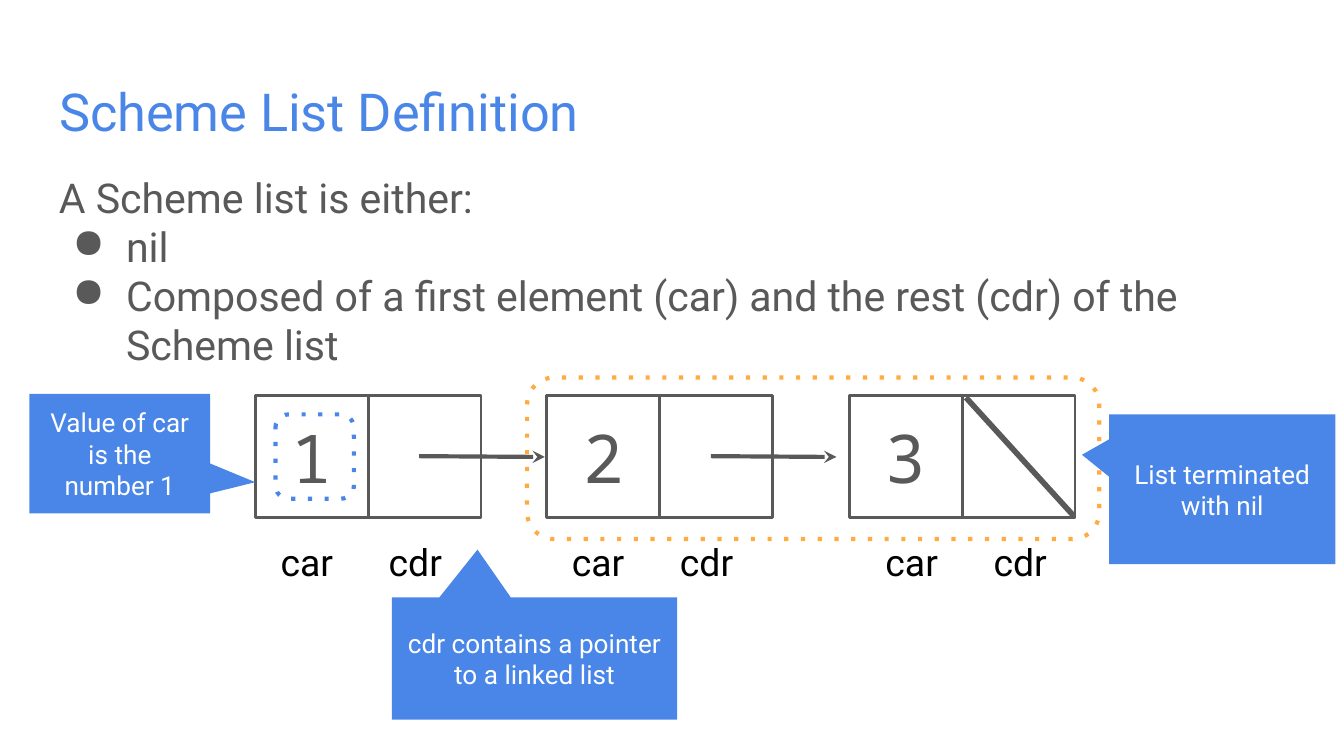
import dataclasses
import typing

import pptx
import pptx.dml.color
import pptx.enum.shapes
import pptx.enum.text
import pptx.oxml
import pptx.oxml.ns
import pptx.util

Pt = pptx.util.Pt
Shape = pptx.enum.shapes.MSO_SHAPE
Align = pptx.enum.text.PP_ALIGN
Anchor = pptx.enum.text.MSO_ANCHOR

BLUE, GRAY, ORANGE, WHITE, BLACK = "4A86E8", "595959", "FFAB40", "FFFFFF", "000000"
INSET = 7.2
CELL_TOP, CELL_WIDTH, CELL_HEIGHT = 211.7, 60.5, 65.5
LABEL_TOP, LABEL_WIDTH, LABEL_HEIGHT = 281.5, 58.1, 28.8
ARROW_OFFSET, ARROW_LENGTH, ARROW_TOP = 87.8, 67.3, 244.4


class Frame(typing.NamedTuple):
    left: float
    top: float
    width: float
    height: float

    def lengths(self) -> list:
        return [Pt(value) for value in self]


@dataclasses.dataclass
class Pair:
    value: str
    left: float
    label_left: float


@dataclasses.dataclass
class Callout:
    text: str
    frame: Frame
    tip: tuple[float, float]


PAIRS = [Pair("1", 136.8, 135.4), Pair("2", 293, 291.4), Pair("3", 455, 459.4)]
CALLOUTS = [
    Callout("Value of car is the number 1", Frame(15.8, 211, 96.8, 64), (0.75, 0.24)),
    Callout("cdr contains a pointer to a linked list", Frame(210, 320, 152.8, 65.5), (-0.2, -0.89)),
    Callout("List terminated with nil", Frame(594.2, 222, 121.2, 80.2), (-0.62, -0.23)),
]
HIGHLIGHTS = {
    BLUE: Frame(147.6, 222, 42, 45.2),
    ORANGE: Frame(282.4, 202.3, 306.5, 86.5),
}
BODY = [
    ("A Scheme list is either:", False),
    ("nil", True),
    ("Composed of a first element (car) and the rest (cdr) of the Scheme list", True),
]


def color(value: str) -> pptx.dml.color.RGBColor:
    return pptx.dml.color.RGBColor.from_string(value)


def append_xml(parent, tag: str, attributes: str = "") -> None:
    parent.append(pptx.oxml.parse_xml(
        f"<a:{tag} {pptx.oxml.ns.nsdecls('a')} {attributes}/>"))


def format_frame(box, anchor=Anchor.TOP):
    settings = {
        "word_wrap": True,
        "auto_size": pptx.enum.text.MSO_AUTO_SIZE.NONE,
        "vertical_anchor": anchor,
        "margin_left": Pt(INSET),
        "margin_right": Pt(INSET),
        "margin_top": Pt(INSET),
        "margin_bottom": Pt(INSET),
    }
    for name, value in settings.items():
        setattr(box.text_frame, name, value)
    return box.text_frame


def write(para, text: str, size: float, ink: str, align=Align.CENTER, font="Roboto") -> None:
    para.alignment = align
    span = para.add_run()
    span.text = text
    for name, value in {"size": Pt(size), "name": font}.items():
        setattr(span.font, name, value)
    span.font.color.rgb = color(ink)


def add_bullet(para) -> None:
    properties = para._p.get_or_add_pPr()
    properties.set("marL", str(Pt(36)))
    properties.set("indent", str(-Pt(28.8)))
    append_xml(properties, "buChar", 'char="●"')


def add_box(shapes, kind, frame: Frame, fill: str = "", line: str = "", width: float = 1.5):
    box = shapes.add_shape(kind, *frame.lengths())
    box.shadow.inherit = False
    if fill:
        box.fill.solid()
        box.fill.fore_color.rgb = color(fill)
    else:
        box.fill.background()
    if line:
        box.line.color.rgb = color(line)
        box.line.width = Pt(width)
    else:
        box.line.fill.background()
    return box


def add_line(page, start: tuple, end: tuple, width: float, arrow: bool) -> None:
    line = page.shapes.add_connector(
        pptx.enum.shapes.MSO_CONNECTOR.STRAIGHT, *[Pt(value) for value in start + end])
    line.line.color.rgb = color(GRAY)
    line.line.width = Pt(width)
    properties = line._element.spPr
    if arrow:
        append_xml(properties.find(pptx.oxml.ns.qn("a:ln")), "tailEnd", 'type="stealth"')
    append_xml(properties, "effectLst")


def add_pair(page, pair: Pair) -> None:
    group = page.shapes.add_group_shape()
    for column, text in enumerate((pair.value, "")):
        frame = Frame(pair.left + column * CELL_WIDTH, CELL_TOP, CELL_WIDTH, CELL_HEIGHT)
        cell = add_box(group.shapes, Shape.RECTANGLE, frame, line=GRAY)
        if text:
            para = format_frame(cell, Anchor.MIDDLE).paragraphs[0]
            write(para, text, 36, GRAY, font="Noto Sans Mono")


def add_labels(page, pair: Pair) -> None:
    for column, text in enumerate(("car", "cdr")):
        left = pair.label_left + column * LABEL_WIDTH
        frame = Frame(left, LABEL_TOP, LABEL_WIDTH, LABEL_HEIGHT)
        box = page.shapes.add_textbox(*frame.lengths())
        write(format_frame(box).paragraphs[0], text, 20, BLACK)


def add_pointer(page, pair: Pair) -> None:
    start = pair.left + ARROW_OFFSET
    add_line(page, (start, ARROW_TOP), (start + ARROW_LENGTH, ARROW_TOP + 0.4), 2.25, True)


def add_highlight(page, line: str) -> None:
    box = add_box(page.shapes, Shape.ROUNDED_RECTANGLE, HIGHLIGHTS[line], line=line, width=2.25)
    outline = box._element.spPr.find(pptx.oxml.ns.qn("a:ln"))
    append_xml(outline, "prstDash", 'val="dot"')


def add_callout(page, callout: Callout) -> None:
    box = add_box(page.shapes, Shape.ROUNDED_RECTANGULAR_CALLOUT, callout.frame, fill=BLUE)
    for index, value in enumerate((*callout.tip, 0)):
        box.adjustments[index] = value
    write(format_frame(box, Anchor.MIDDLE).paragraphs[0], callout.text, 14, WHITE)


def add_title_and_body(page) -> None:
    title = page.shapes.title
    for name, value in zip(("left", "top", "width", "height"),
                           Frame(24.5, 35.3, 671, 45.4).lengths()):
        setattr(title, name, value)
    write(format_frame(title).paragraphs[0], "Scheme List Definition", 28, BLUE, Align.LEFT)

    body = format_frame(page.shapes.add_textbox(*Frame(24.5, 85, 671, 91.4).lengths()))
    for index, (text, bulleted) in enumerate(BODY):
        para = body.add_paragraph() if index else body.paragraphs[0]
        write(para, text, 22, GRAY, Align.LEFT)
        if bulleted:
            add_bullet(para)


def main() -> None:
    deck = pptx.Presentation()
    deck.slide_width, deck.slide_height = Pt(720), Pt(405)
    page = deck.slides.add_slide(deck.slide_layouts.get_by_name("Title Only"))
    first, second, third = PAIRS

    add_title_and_body(page)
    add_pointer(page, first)
    add_pair(page, first)
    for line in HIGHLIGHTS:
        add_highlight(page, line)
    add_pointer(page, second)
    add_pair(page, second)
    add_pair(page, third)
    add_line(page, (517.5, 213), (575.3, 276.5), 3, False)
    for pair in PAIRS:
        add_labels(page, pair)
    for callout in CALLOUTS:
        add_callout(page, callout)
    deck.save("out.pptx")


if __name__ == "__main__":
    main()
